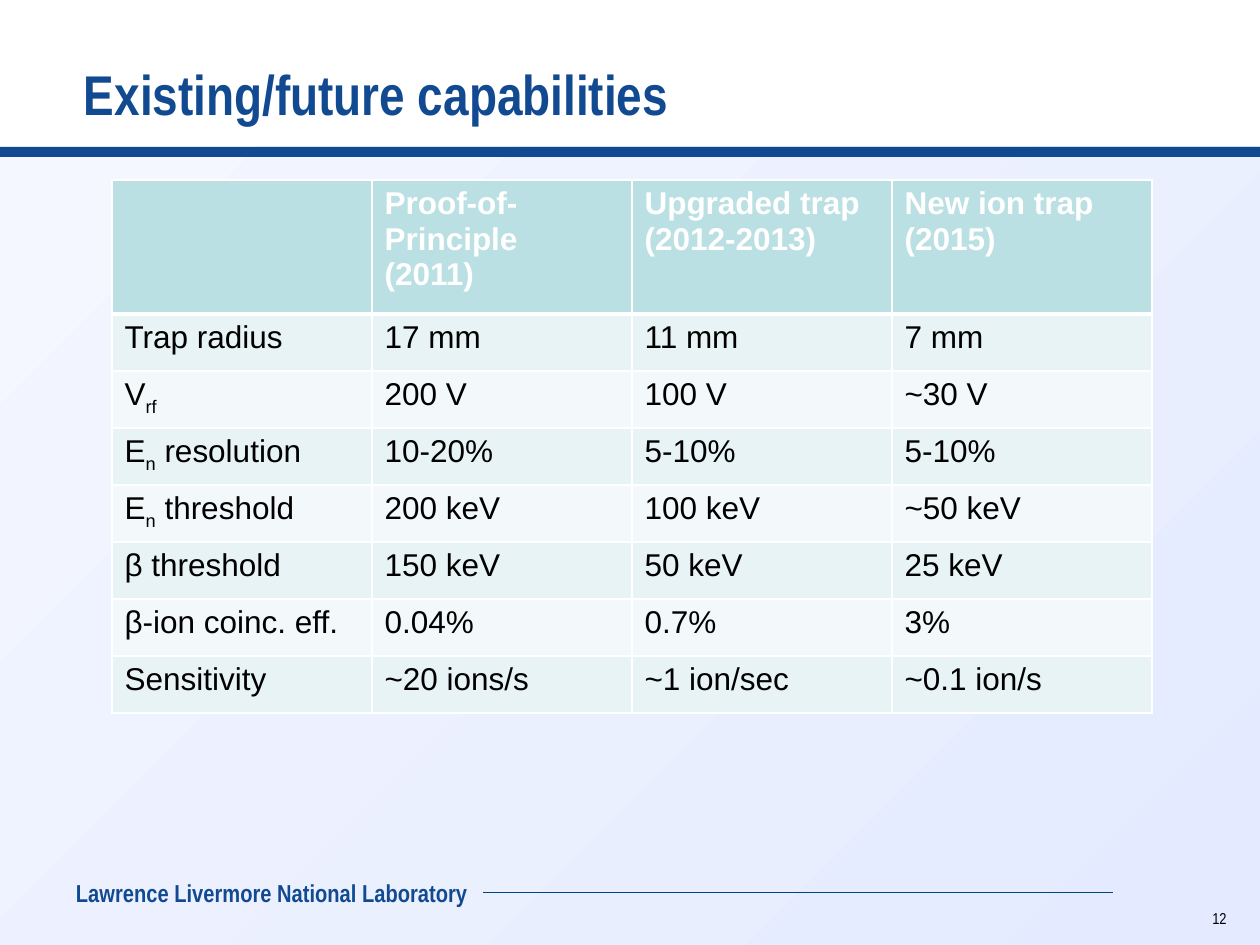
import pptx
import pptx.dml.color
import pptx.enum.shapes
import pptx.enum.text
import pptx.oxml
import pptx.oxml.ns
import pptx.util
from lxml import etree

RGBColor = pptx.dml.color.RGBColor
PP_ALIGN = pptx.enum.text.PP_ALIGN
ANCHOR = pptx.enum.text.MSO_ANCHOR
RECT = pptx.enum.shapes.MSO_SHAPE.RECTANGLE
qn = pptx.oxml.ns.qn

PX = 914400 / 126
BLUE = RGBColor(0x12, 0x4A, 0x91)
RULE = RGBColor(0x00, 0x44, 0x83)
PALE = RGBColor(0xF4, 0xF7, 0xFF)
LAVENDER = RGBColor(0xE4, 0xEA, 0xFF)
HEADER = RGBColor(0xBB, 0xE0, 0xE3)
BANDS = [RGBColor(0xF3, 0xF9, 0xFA), RGBColor(0xE7, 0xF3, 0xF4)]
WHITE = RGBColor(0xFF, 0xFF, 0xFF)
BLACK = RGBColor(0x00, 0x00, 0x00)


def px(*lengths):
    """Turn pixel lengths into a list of EMU."""
    return [round(v * PX) for v in lengths]


def write(p, text, size, name, color, bold=False):
    """Fill a paragraph; parts between underscores become subscripts."""
    for i, part in enumerate(text.split("_")):
        if not part:
            continue
        r = p.add_run()
        r.text = part
        font = {"size": pptx.util.Pt(size), "name": name, "bold": bold}
        for key, value in font.items():
            setattr(r.font, key, value)
        r.font.color.rgb = color
        if i % 2:
            r._r.get_or_add_rPr().set("baseline", "-25000")


prs = pptx.Presentation()
prs.slide_width, prs.slide_height = px(1260, 945)
s = prs.slides.add_slide(prs.slide_layouts[5])

# Background panel and the bar under the title
panel = s.shapes.add_shape(RECT, *px(0, 147, 1260, 798))
panel.fill.gradient()
panel.fill.gradient_angle = 315
for stop, color, position in zip(panel.fill.gradient_stops, (PALE, LAVENDER), (0, 1)):
    stop.color.rgb = color
    stop.position = position
bars = [s.shapes.add_shape(RECT, *px(x, 147, 630, 10)) for x in (0, 630)]
for bar in bars:
    bar.fill.solid()
    bar.fill.fore_color.rgb = BLUE
for sp in [panel, *bars]:
    sp.line.fill.background()
    sp.shadow.inherit = False

# Footer rule
rule = s.shapes.add_connector(pptx.enum.shapes.MSO_CONNECTOR.STRAIGHT, *px(483, 892, 1113, 892))
rule.line.color.rgb = RULE
rule.line.width = pptx.util.Pt(0.5)
etree.SubElement(rule._element.spPr, qn("a:effectLst"))

# Title, slide number and footer
title = s.shapes.title
title.left, title.top, title.width, title.height = px(84, 21, 1095, 112)
number = s.shapes.add_textbox(*px(1196, 907, 43, 26))
footer = s.shapes.add_textbox(*px(63, 872, 451, 42))
for sp, text, size, color, bold, left, anchor, align in [
    (title, "Existing/future capabilities", 32, BLUE, True, 0, ANCHOR.BOTTOM, PP_ALIGN.LEFT),
    (number, "12", 9, BLACK, False, 0, ANCHOR.TOP, PP_ALIGN.RIGHT),
    (footer, "Lawrence Livermore National Laboratory", 14, BLUE, True, 13, ANCHOR.TOP, PP_ALIGN.LEFT),
]:
    tf = sp.text_frame
    frame = {"word_wrap": True, "vertical_anchor": anchor, "margin_left": px(left)[0]}
    for key, value in frame.items():
        setattr(tf, key, value)
    tf.paragraphs[0].alignment = align
    write(tf.paragraphs[0], text, size, "Arial Narrow", color, bold)
number.text_frame.paragraphs[0].line_spacing = 0.75

# Capabilities table
ROWS = [
    ["", "Proof-of-Principle\n(2011)", "Upgraded trap\n(2012-2013)", "New ion trap (2015)"],
    ["Trap radius", "17 mm", "11 mm", "7 mm"],
    ["V_rf_", "200 V", "100 V", "~30 V"],
    ["E_n_ resolution", "10-20%", "5-10%", "5-10%"],
    ["E_n_ threshold", "200 keV", "100 keV", "~50 keV"],
    ["β threshold", "150 keV", "50 keV", "25 keV"],
    ["β-ion coinc. eff.", "0.04%", "0.7%", "3%"],
    ["Sensitivity", "~20 ions/s", "~1 ion/sec", "~0.1 ion/s"],
]
table = s.shapes.add_table(len(ROWS), 4, *px(112, 180, 1040, 533)).table
for column in table.columns:
    column.width = px(260)[0]
for i, values in enumerate(ROWS):
    head = i == 0
    table.rows[i].height = px(134 if head else 57)[0]
    for j, value in enumerate(values):
        cell = table.cell(i, j)
        tf = cell.text_frame
        for k, text in enumerate(value.split("\n")):
            p = tf.add_paragraph() if k else tf.paragraphs[0]
            write(p, text, 18, "Arial", WHITE if head else BLACK, head)
        tcPr = cell._tc.get_or_add_tcPr()
        for side in "LRTB":
            thick = (i, side) in [(0, "B"), (1, "T")]
            ln = etree.SubElement(tcPr, qn(f"a:ln{side}"), w=str(pptx.util.Pt(3 if thick else 1)))
            fill = etree.SubElement(ln, qn("a:solidFill"))
            etree.SubElement(fill, qn("a:srgbClr"), val=str(WHITE))
        cell.fill.solid()
        cell.fill.fore_color.rgb = HEADER if head else BANDS[i % 2]

prs.save("out.pptx")
